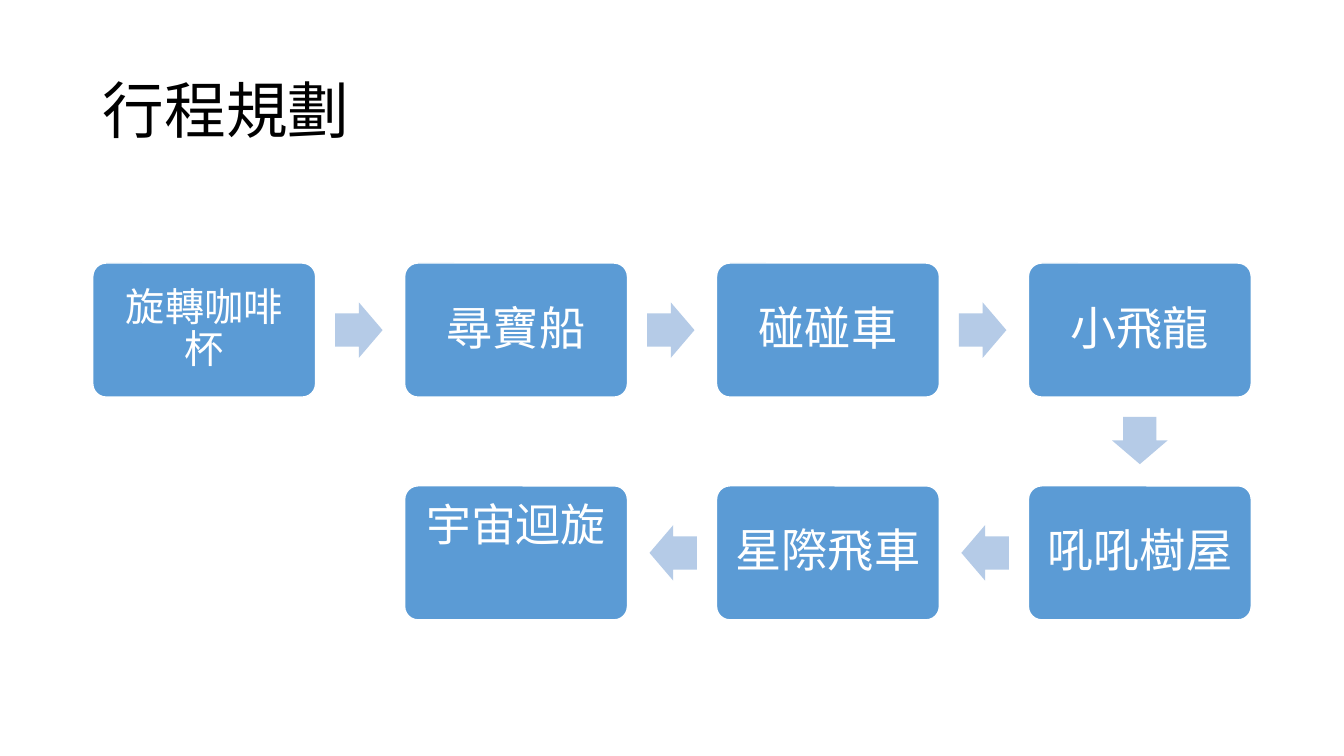
"""Build the itinerary slide: a snaking flow of seven rides."""
from itertools import pairwise

from pptx import Presentation
from pptx import util as u
from pptx.dml.color import RGBColor
from pptx.enum import shapes, text

BLACK = RGBColor(0x00, 0x00, 0x00)
WHITE = RGBColor(0xFF, 0xFF, 0xFF)
BLUE = RGBColor(0x5B, 0x9B, 0xD5)
PALE_BLUE = RGBColor(0xB5, 0xCB, 0xE7)

LEFT, TOP = 0.92, 2.61
COLUMN_STEP, ROW_STEP = 9.28 / 3, 2.21
BOX_W, BOX_H = 2.21, 1.33
ARROW_W, ARROW_H = 0.47, 0.55
ARROW_OFFSET = 0.43

MIDDLE, HIGH = text.MSO_ANCHOR.MIDDLE, text.MSO_ANCHOR.TOP
RIDES = [
    ("旋轉咖啡杯", 0, 0, 28, 0.12, MIDDLE),
    ("尋寶船", 1, 0, 33, 0.14, MIDDLE),
    ("碰碰車", 2, 0, 33, 0.14, MIDDLE),
    ("小飛龍", 3, 0, 33, 0.14, MIDDLE),
    ("吼吼樹屋", 3, 1, 33, 0.14, MIDDLE),
    ("星際飛車", 2, 1, 33, 0.14, MIDDLE),
    ("宇宙迴旋", 1, 1, 32, 0.13, HIGH),
]


class FlowSlide:
    """Hold the slide and its style, and draw each kind of element."""

    font = "Calibri"

    def __init__(self, deck):
        self.slide = deck.slides.add_slide(deck.slide_layouts[5])

    def label(self, frame, wording, size, color, align, anchor):
        frame.word_wrap = True
        frame.auto_size = text.MSO_AUTO_SIZE.NONE
        frame.vertical_anchor = anchor
        paragraph = frame.paragraphs[0]
        paragraph.text = wording
        paragraph.alignment = align
        paragraph.line_spacing = 0.9
        paragraph.font.name = self.font
        paragraph.font.size = u.Pt(size)
        paragraph.font.color.rgb = color

    def title(self, wording):
        heading = self.slide.shapes.title
        heading.left, heading.top = u.Inches(0.92), u.Inches(0.4)
        heading.width, heading.height = u.Inches(11.5), u.Inches(1.45)
        self.label(heading.text_frame, wording, 44, BLACK, text.PP_ALIGN.LEFT, MIDDLE)

    def preset(self, kind, left, top, width, height, fill, adjustments):
        shape = self.slide.shapes.add_shape(
            kind, *(u.Inches(length) for length in (left, top, width, height)))
        shape.shadow.inherit = False
        shape.fill.solid()
        shape.fill.fore_color.rgb = fill
        for index, value in enumerate(adjustments):
            shape.adjustments[index] = value
        return shape

    def ride(self, name, column, row, size, inset, anchor):
        box = self.preset(
            shapes.MSO_SHAPE.ROUNDED_RECTANGLE, LEFT + column * COLUMN_STEP,
            TOP + row * ROW_STEP, BOX_W, BOX_H, BLUE, [0.1])
        box.line.color.rgb = WHITE
        box.line.width = u.Pt(1)
        frame = box.text_frame
        frame.margin_left = frame.margin_right = u.Inches(inset)
        frame.margin_top = frame.margin_bottom = u.Inches(inset)
        self.label(frame, name, size, WHITE, text.PP_ALIGN.CENTER, anchor)

    def arrow(self, column, row, across, down):
        center_x = LEFT + column * COLUMN_STEP + BOX_W / 2 + across * (BOX_W / 2 + ARROW_OFFSET)
        center_y = TOP + row * ROW_STEP + BOX_H / 2 + down * (BOX_H / 2 + ARROW_OFFSET)
        arrow = self.preset(
            shapes.MSO_SHAPE.RIGHT_ARROW, center_x - ARROW_W / 2,
            center_y - ARROW_H / 2, ARROW_W, ARROW_H, PALE_BLUE, [0.6, 0.5])
        arrow.line.fill.background()
        arrow.rotation = 90 if down else 90 * (1 - across)


def main():
    deck = Presentation()
    deck.slide_width, deck.slide_height = u.Inches(13.33), u.Inches(7.5)
    itinerary = FlowSlide(deck)
    itinerary.title("行程規劃")
    for ride in RIDES:
        itinerary.ride(*ride)
    for (_, column, row, *_), (_, next_column, next_row, *_) in pairwise(RIDES):
        itinerary.arrow(column, row, next_column - column, next_row - row)
    deck.save("out.pptx")


if __name__ == "__main__":
    main()
